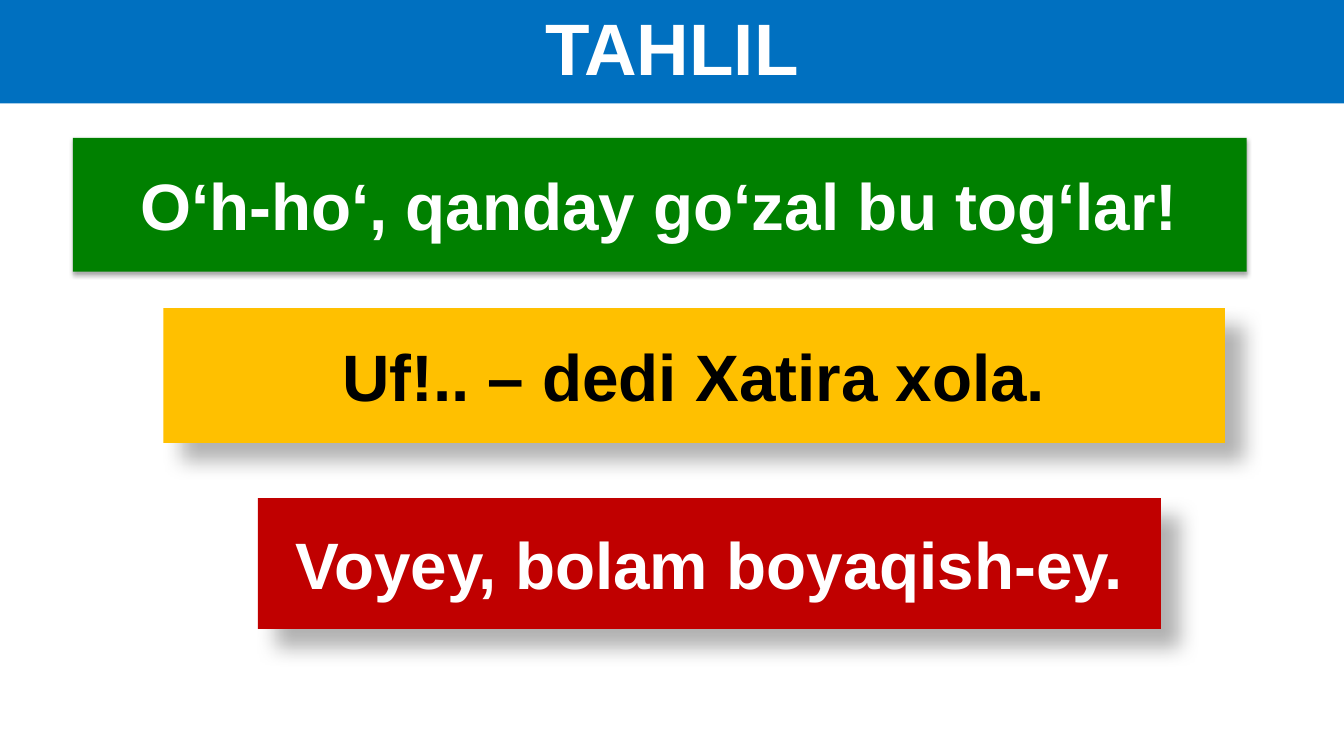
"""Build the TAHLIL slide: a title band and three example sentences on bars."""
from lxml import etree
from pptx import Presentation
from pptx import util as u
from pptx.dml.color import RGBColor
from pptx.enum import shapes, text
from pptx.oxml.ns import qn

HUES = {"blue": "0070C0", "green": "008000", "gold": "FFC000",
        "red": "C00000", "white": "FFFFFF", "black": "000000"}


def add_bar(slide, words, box, fill, ink, size):
    bar = slide.shapes.add_shape(shapes.MSO_SHAPE.RECTANGLE, *map(u.Inches, box))
    bar.shadow.inherit = False
    bar.fill.solid()
    bar.fill.fore_color.rgb = RGBColor.from_string(HUES[fill])
    bar.line.fill.background()
    frame = bar.text_frame
    frame.text = words
    frame.word_wrap = True
    frame.vertical_anchor = text.MSO_ANCHOR.MIDDLE
    line = frame.paragraphs[0]
    line.alignment = text.PP_ALIGN.CENTER
    font = line.runs[0].font
    font.name, font.size, font.bold = "Arial", u.Pt(size), True
    font.color.rgb = RGBColor.from_string(HUES[ink])
    return bar


def add_shade(bar, alpha, blur, dist, angle):
    effects = bar._element.spPr.find(qn("a:effectLst"))
    shade = etree.SubElement(effects, qn("a:outerShdw"), blurRad=str(u.Pt(blur)),
                             dist=str(u.Pt(dist)), dir=str(angle * 60000),
                             algn="tl", rotWithShape="0")
    hue = etree.SubElement(shade, qn("a:srgbClr"), val=HUES["black"])
    etree.SubElement(hue, qn("a:alpha"), val=str(alpha * 1000))


deck = Presentation()
deck.slide_width, deck.slide_height = u.Inches(13.65), u.Inches(7.68)
slide = deck.slides.add_slide(deck.slide_layouts[6])

title = add_bar(slide, "TAHLIL", (0, 0, 13.65, 1.05), "blue", "white", 53.3)
title.text_frame.paragraphs[0].line_spacing = 0.9

soft = (32, 3.5, 2.2, 90)
deep = (30, 15, 18, 45)
bars = [
    ("O‘h-ho‘, qanday go‘zal bu tog‘lar!", (0.74, 1.4, 11.92, 1.36), "green", "white", soft),
    ("Uf!.. – dedi Xatira xola.", (1.66, 3.13, 10.78, 1.37), "gold", "black", deep),
    ("Voyey, bolam boyaqish-ey.", (2.62, 5.06, 9.17, 1.33), "red", "white", deep),
]
for words, box, fill, ink, shade in bars:
    add_shade(add_bar(slide, words, box, fill, ink, 48), *shade)

deck.save("out.pptx")
